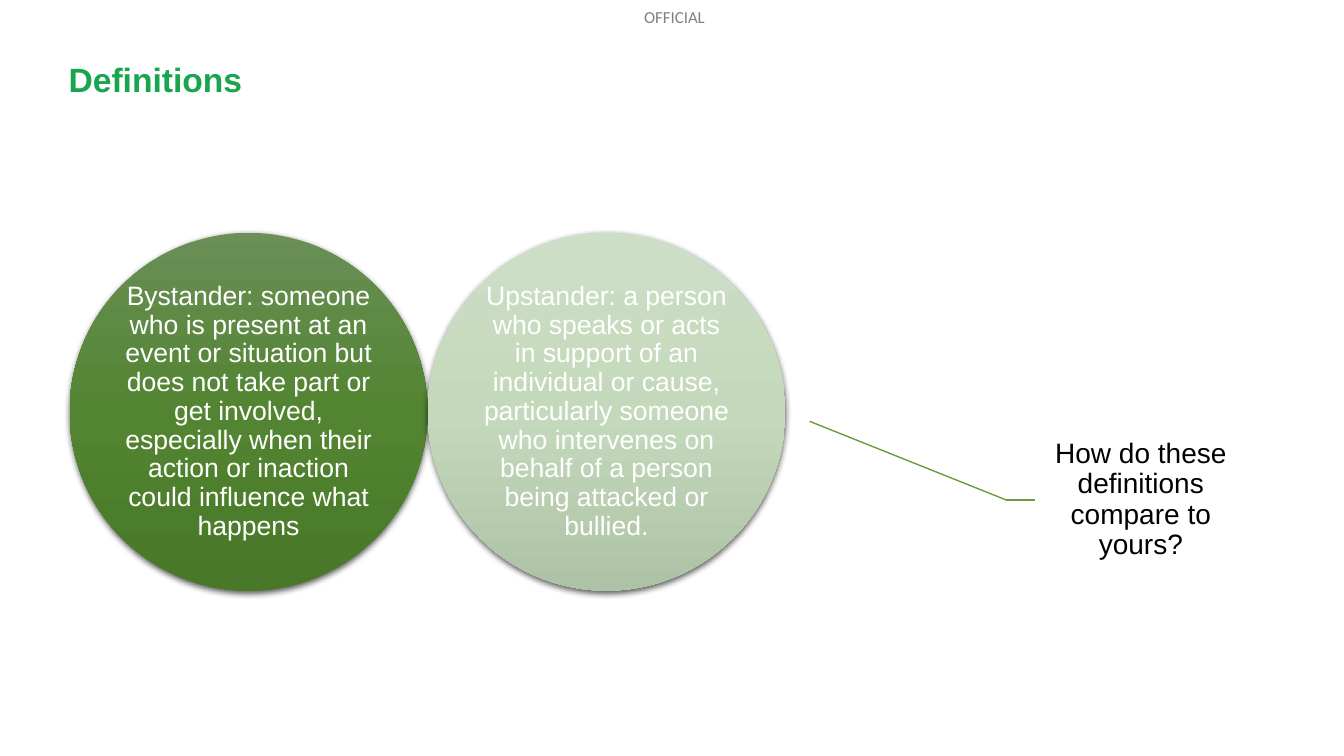
from copy import deepcopy

from pptx import Presentation
from pptx.dml.color import RGBColor
from pptx.enum import shapes, text
from pptx.oxml import ns, xmlchemy
from pptx.util import Inches, Pt

BLACK = RGBColor(0x00, 0x00, 0x00)
WHITE = RGBColor(0xFF, 0xFF, 0xFF)
TITLE_GREEN = RGBColor(0x18, 0xA5, 0x4D)
LINE_GREEN = RGBColor(0x66, 0x9D, 0x40)
DARK_GREENS = [RGBColor(0x6A, 0x8F, 0x57), RGBColor(0x52, 0x84, 0x31), RGBColor(0x48, 0x78, 0x28)]
PALE_GREENS = [RGBColor(0xCD, 0xDE, 0xC6), RGBColor(0xC4, 0xD9, 0xBB), RGBColor(0xAE, 0xC3, 0xA5)]

CIRCLE_LEFT, CIRCLE_TOP, CIRCLE_SIZE = 0.69, 2.31, 3.55
DEFINITIONS = [
    ("Bystander: someone who is present at an event or situation but does not take part "
     "or get involved, especially when their action or inaction could influence what happens",
     DARK_GREENS),
    ("Upstander: a person who speaks or acts in support of an individual or cause, "
     "particularly someone who intervenes on behalf of a person being attacked or bullied.",
     PALE_GREENS),
]


def add_element(parent, tag, **attributes):
    element = xmlchemy.OxmlElement(tag)
    for name, value in attributes.items():
        element.set(name, str(value))
    parent.append(element)
    return element


def write_text(shape, words, align, anchor, inset=0, spacing=0.9, **font_format):
    frame = shape.text_frame
    margins = dict.fromkeys(
        ("margin_left", "margin_top", "margin_right", "margin_bottom"), Inches(inset))
    frame_format = dict(margins, word_wrap=True, vertical_anchor=anchor,
                        auto_size=text.MSO_AUTO_SIZE.NONE)
    for name, value in frame_format.items():
        setattr(frame, name, value)
    para = frame.paragraphs[0]
    para.alignment = align
    para.line_spacing = spacing
    span = para.add_run()
    span.text = words
    color = font_format.pop("color")
    for name, value in {"name": "Arial", **font_format}.items():
        setattr(span.font, name, value)
    span.font.color.rgb = color
    return span


def add_text(page, place, words, **text_format):
    box = page.shapes.add_textbox(*map(Inches, place))
    return write_text(box, words, text.PP_ALIGN.CENTER, **text_format)


def add_circle(page, left, words, greens):
    circle = page.shapes.add_shape(
        shapes.MSO_SHAPE.OVAL, Inches(left), Inches(CIRCLE_TOP),
        Inches(CIRCLE_SIZE), Inches(CIRCLE_SIZE))
    circle.line.fill.background()

    # Three-stop gradient, top to bottom
    circle.fill.gradient()
    circle.fill.gradient_angle = 270
    properties = circle.element.spPr
    stops = properties.find(".//" + ns.qn("a:gsLst"))
    stops.append(deepcopy(stops[-1]))
    for stop, color, position in zip(circle.fill.gradient_stops, greens, (0, 0.5, 1)):
        stop.color.rgb = color
        stop.position = position

    # Soft shadow below
    circle.shadow.inherit = False
    effects = properties.find(ns.qn("a:effectLst"))
    shadow = add_element(effects, "a:outerShdw", blurRad=Pt(4.5), dist=Pt(1.5),
                         dir=5400000, algn="ctr", rotWithShape=0)
    shade = add_element(shadow, "a:srgbClr", val=BLACK)
    add_element(shade, "a:alpha", val=63000)

    write_text(circle, words, text.PP_ALIGN.CENTER, text.MSO_ANCHOR.MIDDLE,
               size=Pt(19), color=WHITE)


def add_line(page, start, end):
    line = page.shapes.add_connector(
        shapes.MSO_CONNECTOR.STRAIGHT, *map(Inches, start + end))
    line.line.color.rgb = LINE_GREEN
    line.line.width = Pt(1)
    add_element(line.element.spPr, "a:effectLst")


def main():
    deck = Presentation()
    deck.slide_width, deck.slide_height = Inches(13.33), Inches(7.5)
    page = deck.slides.add_slide(deck.slide_layouts[5])

    # Marking at the top, half transparent
    marking = add_text(page, (6.17, 0.07, 1.04, 0.2), "OFFICIAL", anchor=text.MSO_ANCHOR.TOP,
                       spacing=1.0, name="Calibri", size=Pt(12), color=BLACK)
    ink = marking.font.fill._xPr.find(".//" + ns.qn("a:srgbClr"))
    add_element(ink, "a:alpha", val=50000)

    # Title
    title = page.shapes.title
    title.left, title.top, title.width, title.height = map(Inches, (0.68, 0.63, 11.97, 0.96))
    write_text(title, "Definitions", text.PP_ALIGN.LEFT, text.MSO_ANCHOR.TOP,
               size=Pt(24), bold=True, color=TITLE_GREEN)

    # Touching circles
    for index, (words, greens) in enumerate(DEFINITIONS):
        add_circle(page, CIRCLE_LEFT + index * CIRCLE_SIZE, words, greens)

    # Question with its leader line
    bend = (9.98, 4.96)
    add_line(page, (8.03, 4.18), bend)
    add_line(page, bend, (10.27, 4.96))
    add_text(page, (10.27, 4.08, 2.09, 1.76), "How do these definitions compare to yours?",
             anchor=text.MSO_ANCHOR.MIDDLE, inset=0.16, size=Pt(20), color=BLACK)

    deck.save("out.pptx")


if __name__ == "__main__":
    main()
